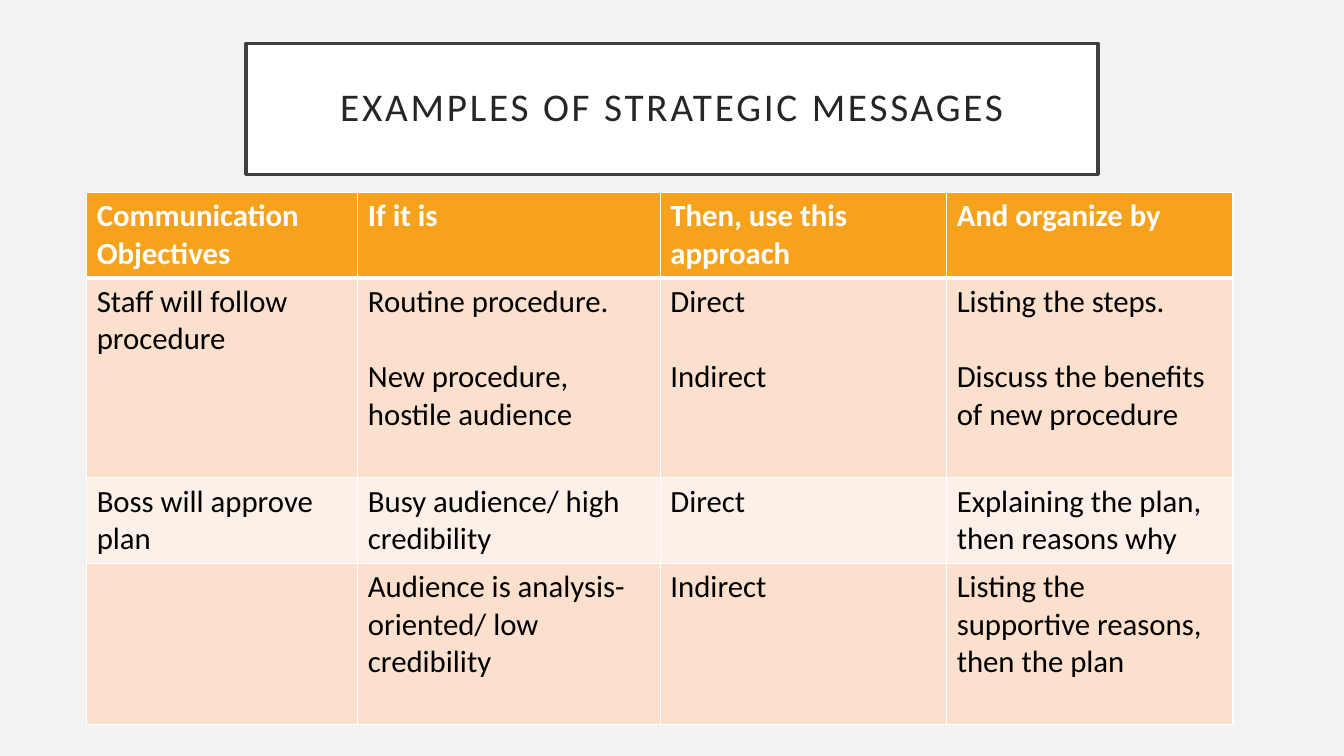
from lxml import etree
from pptx import Presentation
from pptx.dml.color import RGBColor
from pptx.enum import text
from pptx.oxml import ns
from pptx.util import Inches, Pt

FONT = "Calibri"
TITLE = "EXAMPLES OF STRATEGIC MESSAGES"
HEADER = ["Communication Objectives", "If it is", "Then, use this approach", "And organize by"]
ROWS = [
    [["Staff will follow procedure"],
     ["Routine procedure.", "New procedure, hostile audience"],
     ["Direct", "Indirect"],
     ["Listing the steps.", "Discuss the benefits of new procedure"]],
    [["Boss will approve plan"], ["Busy audience/ high credibility"],
     ["Direct"], ["Explaining the plan, then reasons why"]],
    [[], ["Audience is analysis-oriented/ low credibility"],
     ["Indirect"], ["Listing the supportive reasons, then the plan"]],
]
COLUMN_WIDTHS = [2.69, 3, 2.84, 2.84]
ROW_HEIGHTS = [0.85, 1.98, 0.85, 1.6]
HEADER_FILL = "F6A21D"
BAND_FILLS = ["FDF0E8", "FBE0CD"]
TEXT_SIZE = 22
PARAGRAPH_GAP = 27


def rgb(value):
    return RGBColor.from_string(value)


def add_span(para, words, size, color, bold=False):
    span = para.add_run()
    span.text = words
    span.font.name = FONT
    span.font.size = Pt(size)
    span.font.bold = bold
    span.font.color.rgb = rgb(color)
    return span


def add_border(cell, side, points):
    properties = cell._tc.get_or_add_tcPr()
    line = etree.SubElement(properties, ns.qn(f"a:ln{side}"), w=str(Pt(points)))
    fill = etree.SubElement(line, ns.qn("a:solidFill"))
    etree.SubElement(fill, ns.qn("a:srgbClr"), val="FFFFFF")


def add_title(page):
    box = page.shapes.title
    box.left, box.top = Inches(2.44), Inches(0.43)
    box.width, box.height = Inches(8.45), Inches(1.3)
    box.fill.solid()
    box.fill.fore_color.rgb = rgb("FFFFFF")
    box.line.color.rgb = rgb("404040")
    box.line.width = Pt(2.5)
    frame = box.text_frame
    frame.word_wrap = True
    frame.auto_size = text.MSO_AUTO_SIZE.NONE
    frame.vertical_anchor = text.MSO_ANCHOR.MIDDLE
    frame.margin_left = frame.margin_right = Inches(0.2)
    frame.margin_top = frame.margin_bottom = Inches(0.2)
    para = frame.paragraphs[0]
    para.alignment = text.PP_ALIGN.CENTER
    para.line_spacing = 0.9
    span = add_span(para, TITLE, 28, "262626")
    span.font._element.set("spc", "200")


def fill_cell(cell, lines, row):
    is_header = row == 0
    borders = {"L": 1, "R": 1, "T": 3 if row == 1 else 1, "B": 3 if is_header else 1}
    for side, points in borders.items():
        add_border(cell, side, points)
    cell.fill.solid()
    cell.fill.fore_color.rgb = rgb(HEADER_FILL if is_header else BAND_FILLS[row % 2])
    frame = cell.text_frame
    for index, words in enumerate(lines):
        para = frame.add_paragraph() if index else frame.paragraphs[0]
        if index:
            para.space_before = Pt(PARAGRAPH_GAP)
        add_span(para, words, TEXT_SIZE, "FFFFFF" if is_header else "000000", is_header)


def add_messages_table(page):
    contents = [[[label] for label in HEADER]] + ROWS
    table = page.shapes.add_table(
        len(contents), len(HEADER), Inches(0.86), Inches(1.91),
        Inches(sum(COLUMN_WIDTHS)), Inches(sum(ROW_HEIGHTS))).table
    for column, width in zip(table.columns, COLUMN_WIDTHS):
        column.width = Inches(width)
    for row, height in zip(table.rows, ROW_HEIGHTS):
        row.height = Inches(height)
    for row, cells in enumerate(contents):
        for column, lines in enumerate(cells):
            fill_cell(table.cell(row, column), lines, row)


def main():
    deck = Presentation()
    deck.slide_width, deck.slide_height = Inches(13.33), Inches(7.5)
    page = deck.slides.add_slide(deck.slide_layouts.get_by_name("Title Only"))
    page.background.fill.solid()
    page.background.fill.fore_color.rgb = rgb("F2F2F2")
    add_title(page)
    add_messages_table(page)
    deck.save("out.pptx")


if __name__ == "__main__":
    main()
